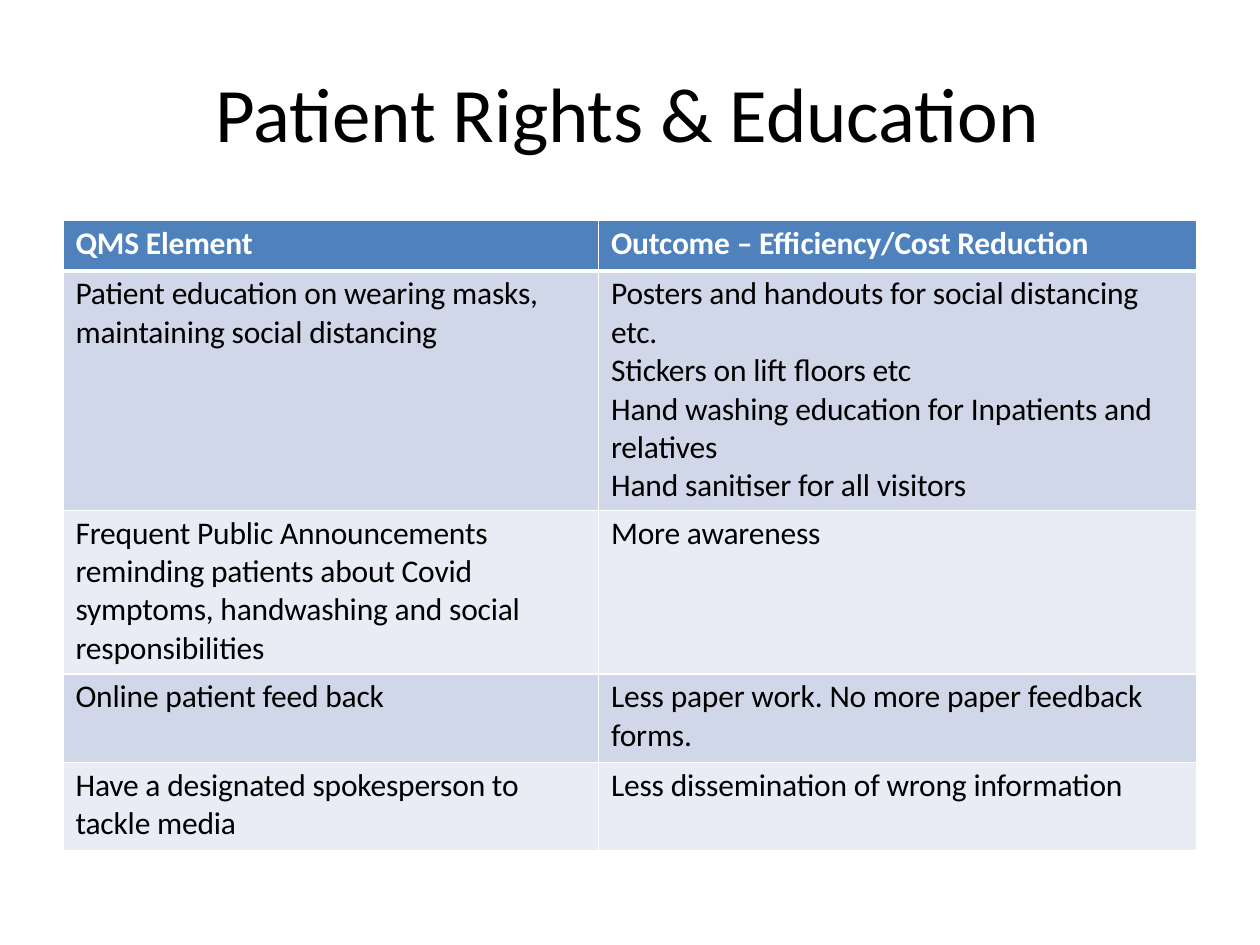
"""Build the Patient Rights & Education slide."""
import pptx
import pptx.dml.color
import pptx.util
from lxml import etree
from pptx.util import Inches


def color(value):
    return pptx.dml.color.RGBColor.from_string(value)


def style(paragraph, size, ink, bold, before):
    paragraph.font.name = "Calibri"
    paragraph.font.size = pptx.util.Pt(size)
    paragraph.font.bold = bold
    paragraph.font.color.rgb = color(ink)
    paragraph.space_before = pptx.util.Pt(before)
    for run in paragraph.runs:
        run._r.get_or_add_rPr().set("spc", "-10")


deck = pptx.Presentation()
deck.slide_width, deck.slide_height = Inches(10), Inches(7.5)
slide = deck.slides.add_slide(deck.slide_layouts[6])

title = slide.shapes.add_textbox(Inches(1.7), Inches(0.51), Inches(6.6), Inches(0.76)).text_frame
title.word_wrap = True
title.margin_left = title.margin_top = Inches(0.01)
title.margin_right = title.margin_bottom = 0
title.text = "Patient Rights & Education"
style(title.paragraphs[0], 44, "000000", False, 1.1)

measures = [
    ("QMS Element", "Outcome – Efficiency/Cost Reduction"),
    ("Patient education on wearing masks, maintaining social distancing",
     "Posters and handouts for social distancing etc.\nStickers on lift floors etc\n"
     "Hand washing education for Inpatients and relatives\nHand sanitiser for all visitors"),
    ("Frequent Public Announcements reminding patients about Covid symptoms, "
     "handwashing and social responsibilities", "More awareness"),
    ("Online patient feed back", "Less paper work. No more paper feedback forms."),
    ("Have a designated spokesperson to\ntackle media", "Less dissemination of wrong information"),
]
heights = [0.4, 1.9, 1.3, 0.7, 0.7]
widths = [4.25, 4.75]
fills = ["4F81BC", "D0D7E8", "E9ECF4", "D0D7E8", "E9ECF4"]

table = slide.shapes.add_table(len(heights), len(widths), Inches(0.5), Inches(1.75),
                               Inches(sum(widths)), Inches(sum(heights))).table
for column, width in zip(table.columns, widths):
    column.width = Inches(width)

for index, (texts, height, fill) in enumerate(zip(measures, heights, fills)):
    table.rows[index].height = Inches(height)
    header = index == 0
    edges = {"L": 1, "R": 1, "T": 3 if index == 1 else 1, "B": 3 if header else 1}
    for cell, text in zip(table.rows[index].cells, texts):
        cell.text = text
        cell.margin_left = cell.margin_right = Inches(0.1)
        cell.margin_top, cell.margin_bottom = Inches(0.03), 0
        for number, paragraph in enumerate(cell.text_frame.paragraphs):
            style(paragraph, 18, "FFFFFF" if header else "000000", header, 0 if number else 2.4)
        properties = cell._tc.get_or_add_tcPr()
        for side, weight in edges.items():
            border = etree.SubElement(properties, pptx.oxml.ns.qn(f"a:ln{side}"),
                                      w=str(pptx.util.Pt(weight)))
            solid = etree.SubElement(border, pptx.oxml.ns.qn("a:solidFill"))
            etree.SubElement(solid, pptx.oxml.ns.qn("a:srgbClr"), val="FFFFFF")
        cell.fill.solid()
        cell.fill.fore_color.rgb = color(fill)

deck.save("out.pptx")
